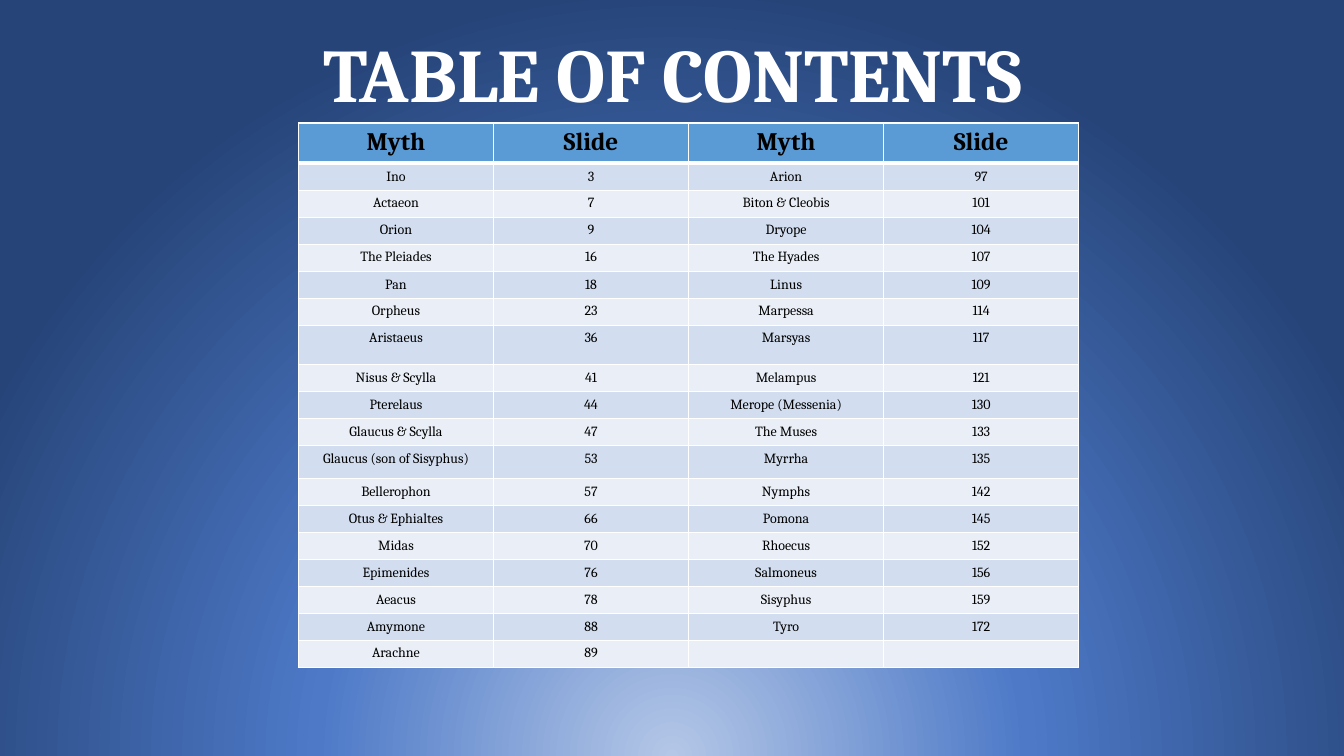
from lxml import etree
from pptx import Presentation
from pptx.dml.color import RGBColor as RGB
from pptx.enum.text import MSO_ANCHOR as Anchor, PP_ALIGN as Align
from pptx.oxml import parse_xml
from pptx.oxml.ns import nsdecls, qn
from pptx.util import Inches, Pt

HUES = {"white": "FFFFFF", "black": "000000", "head": "5B9BD5",
        "odd": "D2DEEF", "even": "EAEFF7",
        "glow": "B4C7E7", "mid": "4D79C7", "edge": "264478"}
FONT = "Cambria"
ROWS = [
    ("Myth", "Slide", "Myth", "Slide"),
    ("Ino", "3", "Arion", "97"),
    ("Actaeon", "7", "Biton & Cleobis", "101"),
    ("Orion", "9", "Dryope", "104"),
    ("The Pleiades", "16", "The Hyades", "107"),
    ("Pan", "18", "Linus", "109"),
    ("Orpheus", "23", "Marpessa", "114"),
    ("Aristaeus", "36", "Marsyas", "117"),
    ("Nisus & Scylla", "41", "Melampus", "121"),
    ("Pterelaus", "44", "Merope (Messenia)", "130"),
    ("Glaucus & Scylla", "47", "The Muses", "133"),
    ("Glaucus (son of Sisyphus)", "53", "Myrrha", "135"),
    ("Bellerophon", "57", "Nymphs", "142"),
    ("Otus & Ephialtes", "66", "Pomona", "145"),
    ("Midas", "70", "Rhoecus", "152"),
    ("Epimenides", "76", "Salmoneus", "156"),
    ("Aeacus", "78", "Sisyphus", "159"),
    ("Amymone", "88", "Tyro", "172"),
    ("Arachne", "89", "", ""),
]
TALL = {0: 0.39, 4: 0.27, 7: 0.39, 11: 0.33}


def style(para, size, hue, bold):
    para.alignment = Align.CENTER
    font = para.font
    font.name, font.size, font.bold = FONT, Pt(size), bold
    font.color.rgb = RGB.from_string(HUES[hue])


def border(cell, top, base):
    props = cell._tc.get_or_add_tcPr()
    for side, width in (("L", 1), ("R", 1), ("T", top), ("B", base)):
        line = etree.SubElement(props, qn(f"a:ln{side}"), w=str(Pt(width)))
        fill = etree.SubElement(line, qn("a:solidFill"))
        etree.SubElement(fill, qn("a:srgbClr"), val=HUES["white"])


deck = Presentation()
deck.slide_width, deck.slide_height = Inches(13.33), Inches(7.5)
slide = deck.slides.add_slide(deck.slide_layouts[6])

slide.background.fill.solid()
solid = slide._element.find(".//" + qn("a:solidFill"))
stops = "".join(
    f'<a:gs pos="{pos * 1000}"><a:srgbClr val="{HUES[hue]}"/></a:gs>'
    for pos, hue in ((0, "glow"), (46, "mid"), (100, "edge")))
solid.getparent().replace(solid, parse_xml(
    f'<a:gradFill rotWithShape="1" {nsdecls("a")}><a:gsLst>{stops}</a:gsLst>'
    '<a:path path="circle"><a:fillToRect l="50000" t="130000" r="50000" b="-30000"/>'
    '</a:path></a:gradFill>'))

title = slide.shapes.add_textbox(Inches(0.92), Inches(0.4), Inches(11.5), Inches(0.74))
frame = title.text_frame
frame.word_wrap = True
frame.vertical_anchor = Anchor.MIDDLE
para = frame.paragraphs[0]
para.text = "TABLE OF CONTENTS"
para.line_spacing = 0.9
style(para, 54, "white", True)

high = [TALL.get(r, 0.26) for r in range(len(ROWS))]
table = slide.shapes.add_table(len(ROWS), 4, Inches(2.96), Inches(1.22),
                               Inches(7.74), Inches(sum(high))).table
for r, row in enumerate(ROWS):
    table.rows[r].height = Inches(high[r])
    head = r == 0
    hue = "head" if head else "odd" if r % 2 else "even"
    for c, text in enumerate(row):
        cell = table.cell(r, c)
        border(cell, 3 if r == 1 else 1, 3 if head else 1)
        cell.fill.solid()
        cell.fill.fore_color.rgb = RGB.from_string(HUES[hue])
        para = cell.text_frame.paragraphs[0]
        style(para, 18 if head else 10, "black", head)
        if text:
            para.text = text
        else:
            etree.SubElement(para._p, qn("a:endParaRPr"), sz="1000")

deck.save("out.pptx")
